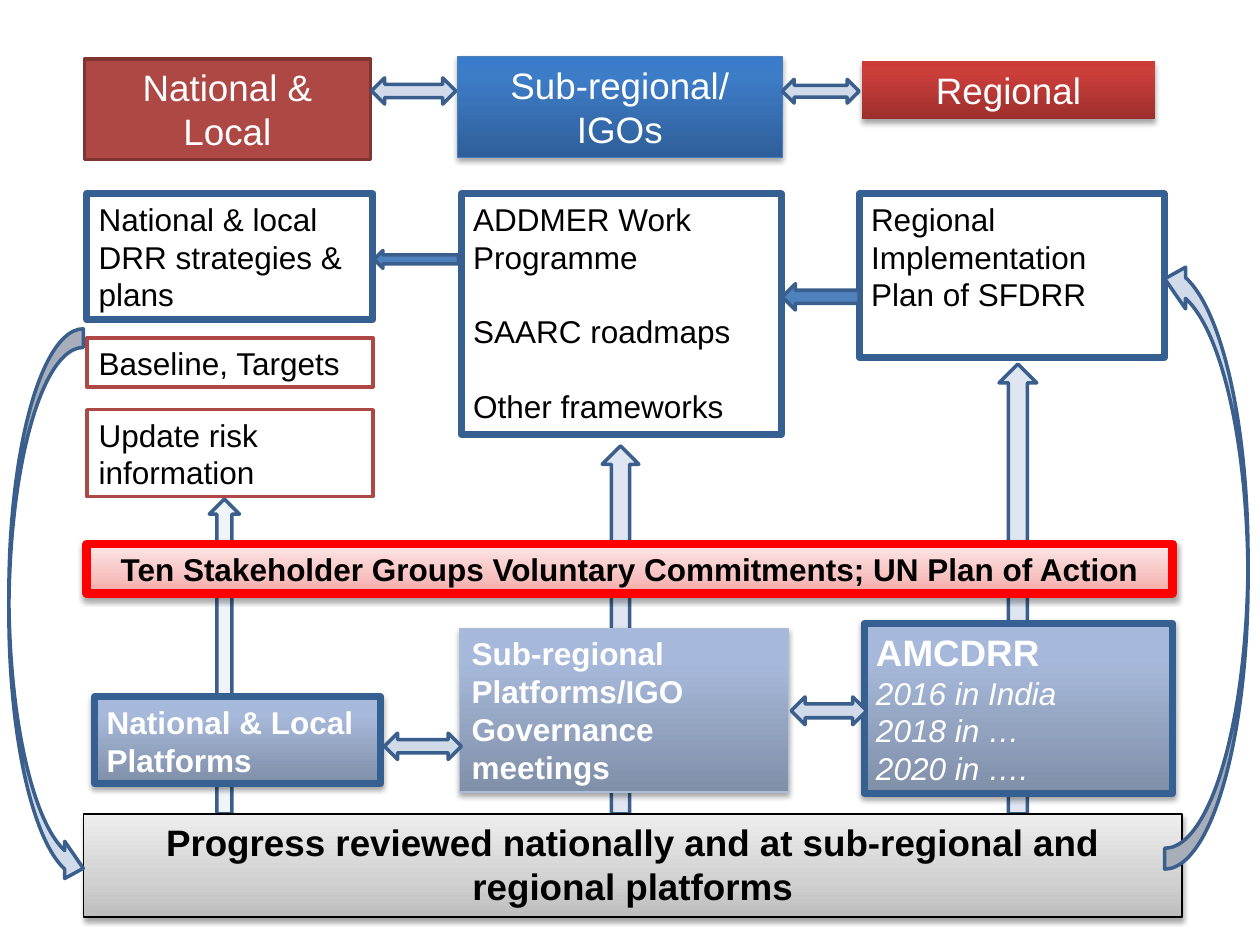
from lxml import etree
from pptx import Presentation, util as u
from pptx.dml.color import RGBColor
from pptx.enum import shapes, text
from pptx.oxml.ns import qn

SHAPE = shapes.MSO_SHAPE
CENTER = text.PP_ALIGN.CENTER
NAVY, OUTLINE, PALE, BRICK = "376092", "3A5F8C", "D1DAE9", "AE4845"

# Gradients run from bottom to top: (position in %, colour)
RED_GRAD = [(0, "9C2F2D"), (80, "CB3E3A"), (100, "CE3B37")]
BLUE_GRAD = [(0, "2F5F99"), (80, "3D7CC7"), (100, "3A7CCB")]
STEEL_GRAD = [(0, "808FA8"), (80, "A7B9DA"), (100, "A6BADC")]
PINK_GRAD = [(0, "F6A7A6"), (35, "F7C2C1"), (100, "FDE7E6")]
GREY_GRAD = [(0, "BDBDBD"), (35, "D1D1D1"), (100, "EEEEEE")]


def rgb(value):
    return RGBColor.from_string(value)


def write(tf, content, size=18, color="000000", bold=False, italic=False,
          align=None, before=0, first=False):
    """Write one paragraph into a text frame."""
    p = tf.paragraphs[0] if first else tf.add_paragraph()
    p.alignment = align or text.PP_ALIGN.LEFT
    if before:
        p.space_before = u.Pt(before)
    r = p.add_run()
    r.text = content
    f = r.font
    f.name, f.size, f.bold, f.italic = "Arial", u.Pt(size), bold, italic
    f.color.rgb = rgb(color)


class Board:
    """Shape style and the slide being drawn."""

    def __init__(self, prs):
        self.s = prs.slides.add_slide(prs.slide_layouts[6])

    def shape(self, kind, at, fill, line=None, width=2):
        sp = self.s.shapes.add_shape(kind, *[u.Cm(v) for v in at])
        if isinstance(fill, list):
            self.gradient(sp, fill)
        else:
            sp.fill.solid()
            sp.fill.fore_color.rgb = rgb(fill)
        if line:
            sp.line.color.rgb = rgb(line)
            sp.line.width = u.Pt(width)
        else:
            sp.line.fill.background()
        sp.shadow.inherit = False
        return sp

    def gradient(self, sp, stops):
        sp.fill.gradient()
        sp.fill.gradient_angle = 90
        gs_list = next(sp._element.spPr.iter(qn("a:gsLst")))
        for gs in list(gs_list):
            gs_list.remove(gs)
        for pos, color in stops:
            gs = etree.SubElement(gs_list, qn("a:gs"), pos=str(pos * 1000))
            etree.SubElement(gs, qn("a:srgbClr"), val=color)

    def shadow(self, sp):
        effects = sp._element.spPr.find(qn("a:effectLst"))
        outer = etree.SubElement(effects, qn("a:outerShdw"), blurRad="40000",
                                 dist="23000", dir="5400000", rotWithShape="0")
        color = etree.SubElement(outer, qn("a:srgbClr"), val="000000")
        etree.SubElement(color, qn("a:alpha"), val="35000")

    def box(self, at, lines, fill="FFFFFF", line=None, width=4, **fmt):
        """Text box; each line is a string or (string, its own format)."""
        sp = self.shape(SHAPE.RECTANGLE, at, fill, line, width)
        if isinstance(fill, list):
            self.shadow(sp)
        tf = sp.text_frame
        tf.word_wrap = True
        tf.vertical_anchor = text.MSO_ANCHOR.TOP
        tf.margin_left = tf.margin_right = u.Cm(0.24)
        tf.margin_top = tf.margin_bottom = u.Cm(0.12)
        for i, item in enumerate(lines):
            content, own = (item, {}) if isinstance(item, str) else item
            write(tf, content, first=i == 0, **{**fmt, **own})

    def arrow(self, kind, at, fill=PALE, rotation=0):
        sp = self.shape(kind, at, fill, OUTLINE)
        sp.rotation = rotation
        return sp


def main():
    prs = Presentation()
    prs.slide_width, prs.slide_height = u.Cm(25.4), u.Cm(19.05)
    b = Board(prs)
    review_top = 16.41

    # Upward arrows behind the boxes, all rising from the review bar
    for x, y, w, fill in [(4.22, 10.06, 0.61, "F0F3F8"),
                          (12.14, 8.99, 0.74, "E0E6F1"),
                          (20.14, 7.34, 0.76, "E0E6F1")]:
        b.arrow(SHAPE.UP_ARROW, (x, y, w, review_top - y), fill)

    # Level headings
    heading = dict(size=21, color="FFFFFF", align=CENTER)
    b.box((1.7, 1.19, 5.77, 2.03), ["National & Local"], BRICK, "813533", 2,
          **heading)
    b.box((9.22, 1.14, 6.55, 2.03), ["Sub-regional/IGOs"], BLUE_GRAD,
          "4B7EBC", 0.75, **heading)
    b.box((17.37, 1.24, 5.92, 1.17), ["Regional"], RED_GRAD, **heading)

    # Plans and frameworks
    plan_top = 3.91
    gap = dict(before=21)
    b.box((1.75, plan_top, 5.77, 2.54),
          ["National & local DRR strategies & plans"], line=NAVY)
    b.box((9.3, plan_top, 6.45, 4.85),
          ["ADDMER Work Programme", ("SAARC roadmaps", gap),
           ("Other frameworks", gap)], line=NAVY)
    b.box((17.32, plan_top, 6.15, 3.3),
          ["Regional Implementation Plan of SFDRR"], line=NAVY)
    b.box((1.75, 6.81, 5.77, 0.99), ["Baseline, Targets"], line=BRICK, width=2)
    b.box((1.75, 8.26, 5.77, 1.75), ["Update risk information"], line=BRICK,
          width=2)

    # Commitments bar
    b.box((1.75, 10.97, 21.89, 0.99),
          ["Ten Stakeholder Groups Voluntary Commitments; UN Plan of Action"],
          PINK_GRAD, "FF0000", 5, bold=True, align=CENTER)

    # Platforms
    platform = dict(color="FFFFFF", bold=True)
    year = dict(bold=False, italic=True)
    b.box((1.91, 14.05, 5.77, 1.75), ["National & Local Platforms"],
          STEEL_GRAD, NAVY, **platform)
    b.box((9.27, 12.67, 6.63, 3.3),
          ["Sub-regional Platforms/IGO Governance meetings"], STEEL_GRAD,
          "ADBCD7", 0.75, **platform)
    b.box((17.42, 12.57, 6.22, 3.43),
          [("AMCDRR", dict(size=21)), ("2016 in India", year),
           ("2018 in …", year), ("2020 in ….", year)],
          STEEL_GRAD, NAVY, **platform)

    # Review bar
    b.box((1.68, review_top, 22.15, 2.08),
          ["Progress reviewed nationally and at sub-regional and",
           "regional platforms"],
          GREY_GRAD, "000000", 0.75, size=21, bold=True, align=CENTER)

    # Feedback loops at both sides
    b.arrow(SHAPE.CURVED_RIGHT_ARROW, (0.18, 6.63, 1.5, 11.25))
    b.arrow(SHAPE.CURVED_UP_ARROW, (18.16, 10.52, 12.32, 1.68), rotation=270)

    # Links between neighbouring columns
    for at in [(7.49, 1.57, 1.7, 0.53), (15.77, 1.6, 1.55, 0.48),
               (7.75, 14.78, 1.55, 0.53), (15.95, 14.05, 1.52, 0.56)]:
        b.arrow(SHAPE.LEFT_RIGHT_ARROW, at)
    for at in [(7.54, 5.05, 1.7, 0.36), (15.77, 5.72, 1.55, 0.53)]:
        b.arrow(SHAPE.LEFT_ARROW, at, "4F81BD")

    prs.save("out.pptx")


if __name__ == "__main__":
    main()
